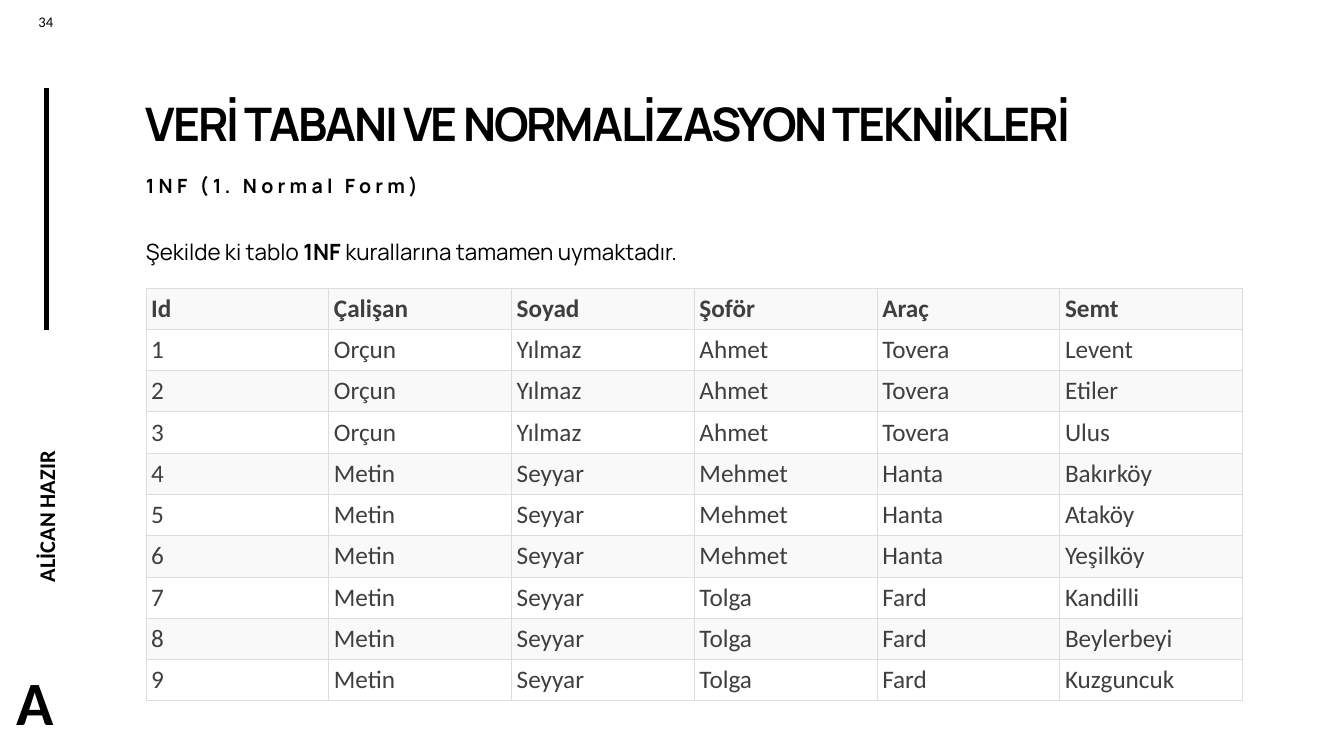
from dataclasses import dataclass, field
from typing import Any

from lxml.etree import SubElement
from pptx import Presentation
from pptx.dml.color import RGBColor
from pptx.enum.shapes import MSO_CONNECTOR
from pptx.enum.text import MSO_ANCHOR, MSO_AUTO_SIZE, PP_ALIGN
from pptx.oxml.ns import qn
from pptx.util import Cm, Pt

BLACK, GREY, RULE = "000000", "3F3F3F", "DDDDDD"
BANDS = ("F9F9F9", "FFFFFF")
LEFT, WIDE = 3.68, 27.64
TOP, ROW = 7.26, 1.04


@dataclass
class Label:
    box: tuple[float, float, float, float]
    runs: list[tuple[str, bool]]
    size: float
    font: str = "Manrope"
    space: float = 0
    turn: float = 0
    frame: dict[str, Any] = field(default_factory=dict)
    para: dict[str, Any] = field(default_factory=dict)


def paint(code: str) -> RGBColor:
    return RGBColor.from_string(code)


def apply(target: Any, values: dict[str, Any]) -> None:
    for name, value in values.items():
        setattr(target, name, value)


def margins(side: float, top: float, right: float) -> dict[str, Any]:
    return {"margin_left": Cm(side), "margin_right": Cm(right),
            "margin_top": Cm(top), "margin_bottom": Cm(top)}


def write(para: Any, text: str, font: str, size: float, bold: bool,
          code: str, space: float = 0) -> None:
    run = para.add_run()
    run.text = text
    apply(run.font, {"name": font, "size": Pt(size), "bold": bold})
    run.font.color.rgb = paint(code)
    if space:
        run.font._element.set("spc", str(int(space * 100)))


def draw_label(slide: Any, label: Label) -> None:
    shape = slide.shapes.add_textbox(*map(Cm, label.box))
    shape.rotation = label.turn
    frame = shape.text_frame
    apply(frame, {"word_wrap": True} | label.frame)
    para = frame.paragraphs[0]
    apply(para, label.para)
    for text, bold in label.runs:
        write(para, text, label.font, label.size, bold, BLACK, label.space)


def draw_rule(slide: Any, x: float, start: float, end: float) -> None:
    line = slide.shapes.add_connector(
        MSO_CONNECTOR.STRAIGHT, Cm(x), Cm(start), Cm(x), Cm(end))
    line.line.width = Pt(3)
    line.line.color.rgb = paint(BLACK)
    SubElement(line._element.spPr, qn("a:effectLst"))


def edge(cell: Any) -> None:
    props = cell._tc.get_or_add_tcPr()
    for side in ("lnL", "lnR", "lnT", "lnB"):
        line = SubElement(props, qn(f"a:{side}"), w=str(Pt(0.75)))
        fill = SubElement(line, qn("a:solidFill"))
        SubElement(fill, qn("a:srgbClr"), val=RULE)


def draw_table(slide: Any, rows: list[tuple[str, ...]]) -> None:
    count = len(rows[0])
    table = slide.shapes.add_table(
        len(rows), count, Cm(LEFT), Cm(TOP), Cm(WIDE), Cm(ROW * len(rows))).table
    for col in table.columns:
        col.width = Cm(WIDE / count)
    for r, row in enumerate(rows):
        for c, text in enumerate(row):
            cell = table.cell(r, c)
            apply(cell, margins(0.13, 0.13, 0.13))
            edge(cell)
            cell.fill.solid()
            cell.fill.fore_color.rgb = paint(BANDS[r % 2])
            write(cell.text_frame.paragraphs[0], text, "Calibri", 18, r == 0, GREY)


# Text formats
TIGHT = margins(0.05, 0.05, 0.05) | {
    "word_wrap": False, "vertical_anchor": MSO_ANCHOR.MIDDLE,
    "auto_size": MSO_AUTO_SIZE.SHAPE_TO_FIT_TEXT}
FLUSH = margins(0, 0.13, 0.25)

LABELS = [
    # Side strip
    Label((-1.07, 12.09, 4.47, 0.79), [("ALİCAN HAZIR", True)], 16, "Calibri",
          turn=270, frame=TIGHT),
    Label((0.43, 0.2, 1.45, 0.69), [("34", False)], 10.5, "Calibri",
          para={"alignment": PP_ALIGN.CENTER}),
    Label((0.36, 16.66, 1.32, 1.98), [("A", True)], 44, "Calibri", frame=TIGHT),
    # Headings and lead
    Label((LEFT, 2.34, WIDE, 1.6),
          [("VERİ TABANI VE NORMALİZASYON TEKNİKLERİ", True)], 33, space=-1.5,
          frame=FLUSH | {"vertical_anchor": MSO_ANCHOR.BOTTOM},
          para={"line_spacing": 0.9}),
    Label((LEFT, 4.32, 23.65, 0.79), [("1NF (1. Normal Form)", True)], 14, space=3,
          frame=FLUSH, para={"line_spacing": 0.9, "space_before": Pt(10)}),
    Label((LEFT, 5.54, WIDE, 1.19),
          [("Şekilde ki tablo ", False), ("1NF", True),
           (" kurallarına tamamen uymaktadır.", False)], 16, frame=FLUSH,
          para={"alignment": PP_ALIGN.JUSTIFY, "line_spacing": 1.5,
                "space_before": Pt(10)}),
]

# Table content: each group shares staff, driver and car
HEAD = ("Id", "Çalişan", "Soyad", "Şoför", "Araç", "Semt")
GROUPS = [
    (("Orçun", "Yılmaz", "Ahmet", "Tovera"), ("Levent", "Etiler", "Ulus")),
    (("Metin", "Seyyar", "Mehmet", "Hanta"), ("Bakırköy", "Ataköy", "Yeşilköy")),
    (("Metin", "Seyyar", "Tolga", "Fard"), ("Kandilli", "Beylerbeyi", "Kuzguncuk")),
]


def main() -> None:
    deck = Presentation()
    apply(deck, {"slide_width": Cm(33.87), "slide_height": Cm(19.05)})
    slide = deck.slides.add_slide(deck.slide_layouts[6])
    draw_rule(slide, 1.17, 8.31, 2.21)
    for label in LABELS:
        draw_label(slide, label)
    body = [(*crew, town) for crew, towns in GROUPS for town in towns]
    draw_table(slide, [HEAD] + [(str(i), *row) for i, row in enumerate(body, 1)])
    deck.save("out.pptx")


if __name__ == "__main__":
    main()
